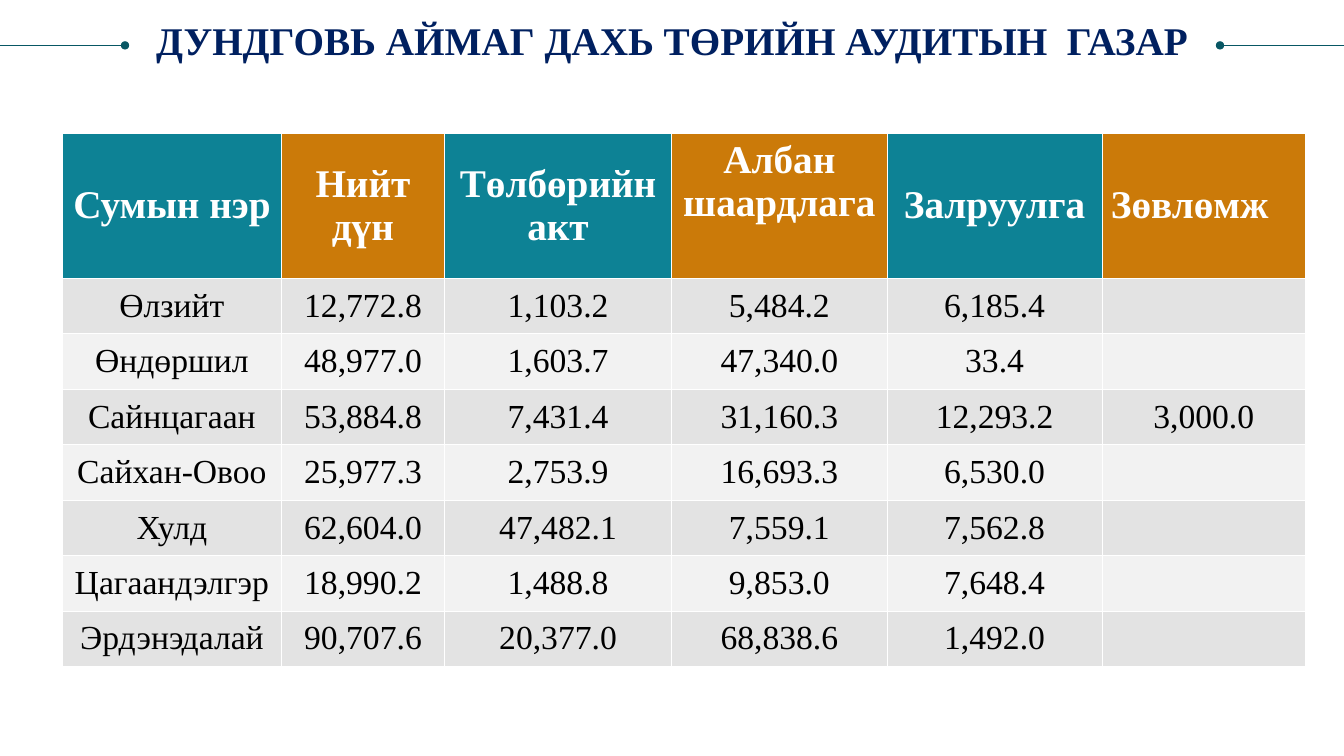
from pptx import Presentation
from pptx import util as u
from pptx.dml.color import RGBColor
from pptx.enum import shapes, text
from pptx.oxml.ns import qn
from lxml import etree

FONT = "Times New Roman"
TEAL, AMBER, NAVY, WHITE = "0D8295", "CB7A09", "002060", "FFFFFF"
BANDS = ("E3E3E3", "F2F2F2")
COLS = (2.17, 1.62, 2.25, 2.14, 2.13, 2.02)
HEAD, ROW = 1.44, 0.55
DATA = (
    ("Сумын нэр", "Нийт дүн", "Төлбөрийн акт", "Албан шаардлага", "Залруулга", "Зөвлөмж"),
    ("Өлзийт", "12,772.8", "1,103.2", "5,484.2", "6,185.4", ""),
    ("Өндөршил", "48,977.0", "1,603.7", "47,340.0", "33.4", ""),
    ("Сайнцагаан", "53,884.8", "7,431.4", "31,160.3", "12,293.2", "3,000.0"),
    ("Сайхан-Овоо", "25,977.3", "2,753.9", "16,693.3", "6,530.0", ""),
    ("Хулд", "62,604.0", "47,482.1", "7,559.1", "7,562.8", ""),
    ("Цагаандэлгэр", "18,990.2", "1,488.8", "9,853.0", "7,648.4", ""),
    ("Эрдэнэдалай", "90,707.6", "20,377.0", "68,838.6", "1,492.0", ""),
)


def paint(fill, tone):
    fill.solid()
    fill.fore_color.rgb = RGBColor.from_string(tone)


def style(para, size, tone, bold, align=text.PP_ALIGN.CENTER):
    para.alignment = align
    font = para.font
    font.name, font.size, font.bold = FONT, u.Pt(size), bold
    font.color.rgb = RGBColor.from_string(tone)


def edge(cell, widths):
    """Draw white borders; widths maps a side (L, R, T, B) to points."""
    props = cell._tc.get_or_add_tcPr()
    for side, width in widths.items():
        line = etree.SubElement(props, qn("a:ln" + side), w=str(u.Pt(width)))
        fill = etree.SubElement(line, qn("a:solidFill"))
        etree.SubElement(fill, qn("a:srgbClr"), val=WHITE)


def rule(slide, start, stop, y, dot):
    """Draw a level line with a round dot at its headEnd or tailEnd."""
    line = slide.shapes.add_connector(
        shapes.MSO_CONNECTOR.STRAIGHT,
        u.Inches(start), u.Inches(y), u.Inches(stop), u.Inches(y))
    line.line.width = u.Pt(0.5)
    paint(line.line.fill, "085764")
    etree.SubElement(line.line._get_or_add_ln(), qn("a:" + dot), type="oval")
    etree.SubElement(line._element.spPr, qn("a:effectLst"))


def title(slide, x, y, w, h):
    box = slide.shapes.add_textbox(*map(u.Inches, (x, y, w, h)))
    frame = box.text_frame
    frame.word_wrap = True
    frame.margin_left = frame.margin_right = frame.margin_top = frame.margin_bottom = 0
    para = frame.paragraphs[0]
    para.text = "ДУНДГОВЬ АЙМАГ ДАХЬ ТӨРИЙН АУДИТЫН  ГАЗАР"
    para.line_spacing = 0.9
    style(para, 28, NAVY, True)


def grid(slide, x, y):
    high = HEAD + ROW * (len(DATA) - 1)
    table = slide.shapes.add_table(
        len(DATA), len(COLS), *map(u.Inches, (x, y, sum(COLS), high))).table
    for col, width in zip(table.columns, COLS):
        col.width = u.Inches(width)
    for r, line in enumerate(DATA):
        table.rows[r].height = u.Inches(ROW if r else HEAD)
        for c, word in enumerate(line):
            cell = table.cell(r, c)
            edge(cell, {"L": 0.5 if c else 1, "R": 0.5, "T": 0.5 if r else 1, "B": 0.5})
            paint(cell.fill, BANDS[(r - 1) % 2] if r else (TEAL, AMBER)[c % 2])
            cell.margin_left = cell.margin_right = u.Inches(0.09)
            cell.vertical_anchor = text.MSO_ANCHOR.MIDDLE
            para = cell.text_frame.paragraphs[0]
            para.text = word
            if r:
                style(para, 24, "000000", False)
            else:
                style(para, 28, WHITE, True)
    table.cell(0, 3).vertical_anchor = text.MSO_ANCHOR.TOP
    table.cell(0, 5).text_frame.paragraphs[0].alignment = text.PP_ALIGN.LEFT


def main():
    deck = Presentation()
    deck.slide_width, deck.slide_height = u.Inches(13.33), u.Inches(7.5)
    slide = deck.slides.add_slide(deck.slide_layouts[6])
    rule(slide, 12.1, 13.33, 0.45, "headEnd")
    rule(slide, 0, 1.24, 0.45, "tailEnd")
    grid(slide, 0.62, 1.32)
    title(slide, 0.25, 0.21, 12.83, 0.42)
    deck.save("out.pptx")


if __name__ == "__main__":
    main()
